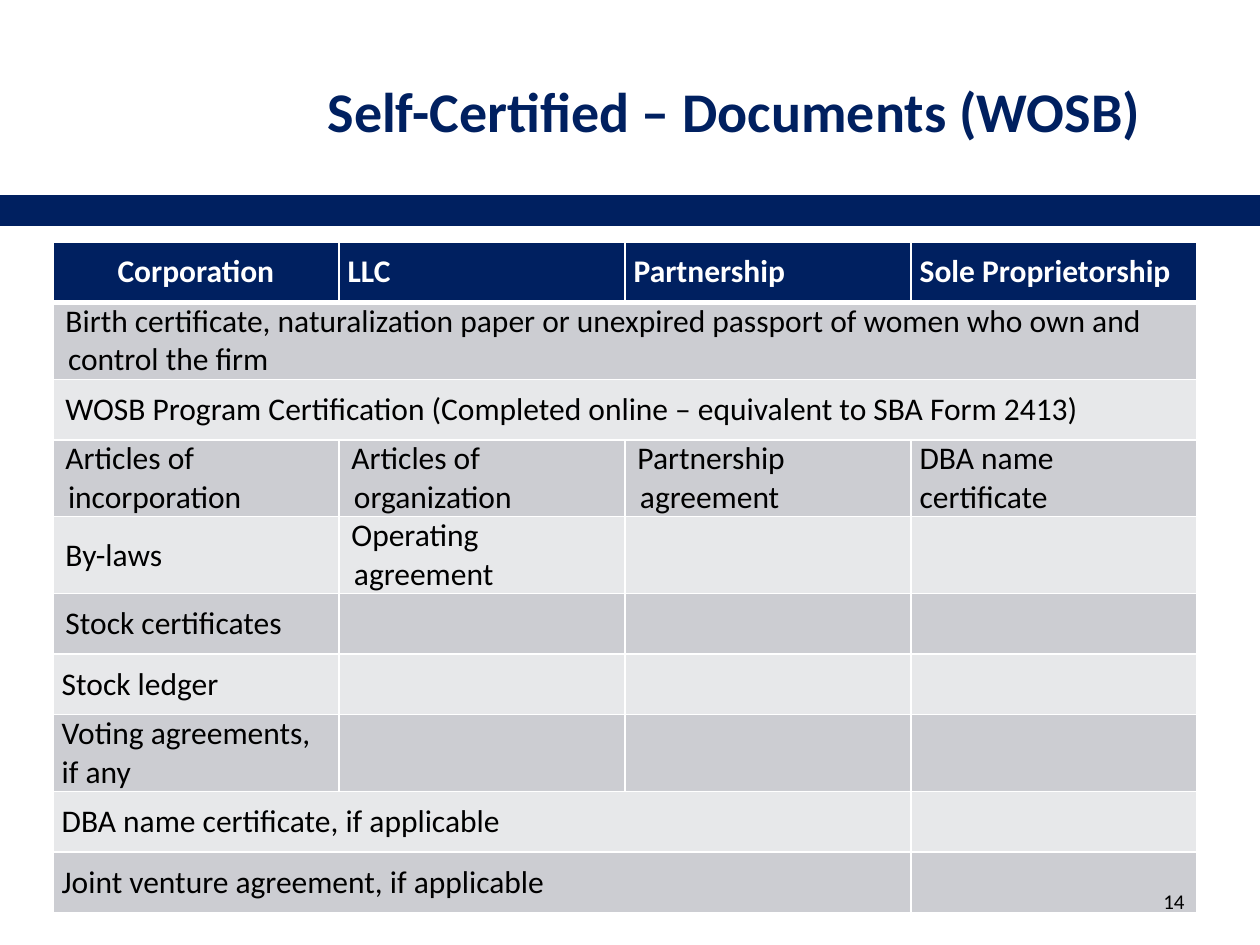
from lxml import etree
from pptx import Presentation
from pptx.dml.color import RGBColor
from pptx.enum.shapes import MSO_CONNECTOR
from pptx.enum.text import MSO_ANCHOR, PP_ALIGN
from pptx.oxml.ns import qn
from pptx.util import Inches, Pt

LEFT, CENTER, RIGHT = PP_ALIGN.LEFT, PP_ALIGN.CENTER, PP_ALIGN.RIGHT
MIDDLE = MSO_ANCHOR.MIDDLE
STRAIGHT = MSO_CONNECTOR.STRAIGHT

COLORS = {"navy": "002060", "white": "FFFFFF", "black": "000000",
          "dark_band": "CCCDD2", "light_band": "E7E8EA"}
FONT = "Calibri"
WIDTH, HEIGHT = 10, 7.5
COLUMNS = 4
ROW, TALL_ROW = 0.48, 0.57
TALL_ROWS = (3, 4, 7)

HEADERS = ["Corporation", "LLC", "Partnership", "Sole Proprietorship"]
# Each row: columns its first cell spans, whether its text hangs, cell texts
DOCUMENTS = [
    (4, True, ["Birth certificate, naturalization paper or unexpired passport "
               "of women who own and control the firm"]),
    (4, True, ["WOSB Program Certification (Completed online – equivalent to "
               "SBA Form 2413)"]),
    (1, True, ["Articles of incorporation", "Articles of organization",
               "Partnership agreement", "DBA name certificate"]),
    (1, True, ["By-laws", "Operating agreement"]),
    (1, True, ["Stock certificates"]),
    (1, False, ["Stock ledger"]),
    (1, False, ["Voting agreements, if any"]),
    (3, False, ["DBA name certificate, if applicable"]),
    (3, False, ["Joint venture agreement, if applicable"]),
]


def rgb(name):
    return RGBColor.from_string(COLORS[name])


def write(tf, text, size=18, color="black", bold=False, align=LEFT, hang=False):
    tf.word_wrap = True
    p = tf.paragraphs[0]
    p.alignment = align
    if hang:
        pPr = p._p.get_or_add_pPr()
        pPr.set("marL", str(Inches(0.05)))
        pPr.set("indent", str(Inches(-0.02)))
    font = p.font
    if text:
        r = p.add_run()
        r.text = text
        font = r.font
    font.name, font.size, font.bold = FONT, Pt(size), bold
    font.color.rgb = rgb(color)


def set_borders(cell, top, bottom):
    """Draw white cell borders; top and bottom are widths in points."""
    tcPr = cell._tc.get_or_add_tcPr()
    sides = {"lnL": 1, "lnR": 1, "lnT": top, "lnB": bottom}
    for i, (tag, width) in enumerate(sides.items()):
        ln = etree.Element(qn(f"a:{tag}"), w=str(Pt(width)))
        fill = etree.SubElement(ln, qn("a:solidFill"))
        etree.SubElement(fill, qn("a:srgbClr"), val=COLORS["white"])
        tcPr.insert(i, ln)


def format_cell(cell, fill, top=1, bottom=1):
    cell.fill.solid()
    cell.fill.fore_color.rgb = rgb(fill)
    cell.vertical_anchor = MIDDLE
    cell.margin_left = cell.margin_right = Inches(0.07)
    cell.margin_top = cell.margin_bottom = 0
    set_borders(cell, top, bottom)


def add_title(s, left, top, width, height):
    title = s.shapes.title
    title.left, title.top = Inches(left), Inches(top)
    title.width, title.height = Inches(width), Inches(height)
    title.text_frame.vertical_anchor = MIDDLE
    write(title.text_frame, "Self-Certified – Documents (WOSB)",
          size=32, color="navy", bold=True)


def add_rule(s, y):
    rule = s.shapes.add_connector(STRAIGHT, 0, Inches(y), Inches(WIDTH), Inches(y))
    rule.line.color.rgb = rgb("navy")
    rule.line.width = Pt(18)
    etree.SubElement(rule._element.spPr, qn("a:effectLst"))


def add_documents_table(s, left, top, width):
    heights = [TALL_ROW if i in TALL_ROWS else ROW
               for i in range(len(DOCUMENTS) + 1)]
    table = s.shapes.add_table(len(heights), COLUMNS, Inches(left), Inches(top),
                               Inches(width), Inches(sum(heights))).table
    table.horz_banding = False
    for column in table.columns:
        column.width = Inches(width / COLUMNS)
    for row, height in zip(table.rows, heights):
        row.height = Inches(height)

    for col, text in enumerate(HEADERS):
        cell = table.cell(0, col)
        format_cell(cell, "navy", bottom=3)
        write(cell.text_frame, text, color="white", bold=True,
              align=LEFT if col else CENTER)

    for row, (span, hang, texts) in enumerate(DOCUMENTS, start=1):
        fill = "dark_band" if row % 2 else "light_band"
        for col in range(COLUMNS):
            cell = table.cell(row, col)
            format_cell(cell, fill, top=3 if row == 1 else 1)
            text = texts[col] if col < len(texts) else ""
            write(cell.text_frame, text, hang=hang and col < COLUMNS - 1)
        if span > 1:
            table.cell(row, 0).merge(table.cell(row, span - 1))


def add_slide_number(s, left, top, width, height):
    box = s.shapes.add_textbox(Inches(left), Inches(top), Inches(width), Inches(height))
    box.text_frame.vertical_anchor = MIDDLE
    write(box.text_frame, "14", size=12, align=RIGHT)


def main():
    prs = Presentation()
    prs.slide_width, prs.slide_height = Inches(WIDTH), Inches(HEIGHT)
    s = prs.slides.add_slide(prs.slide_layouts.get_by_name("Title Only"))
    add_rule(s, 1.67)
    add_title(s, 2.5, 0.25, 7.25, 1.25)
    add_documents_table(s, 0.42, 1.92, 9.08)
    add_slide_number(s, 7.17, 6.95, 2.33, 0.4)
    prs.save("out.pptx")


if __name__ == "__main__":
    main()
